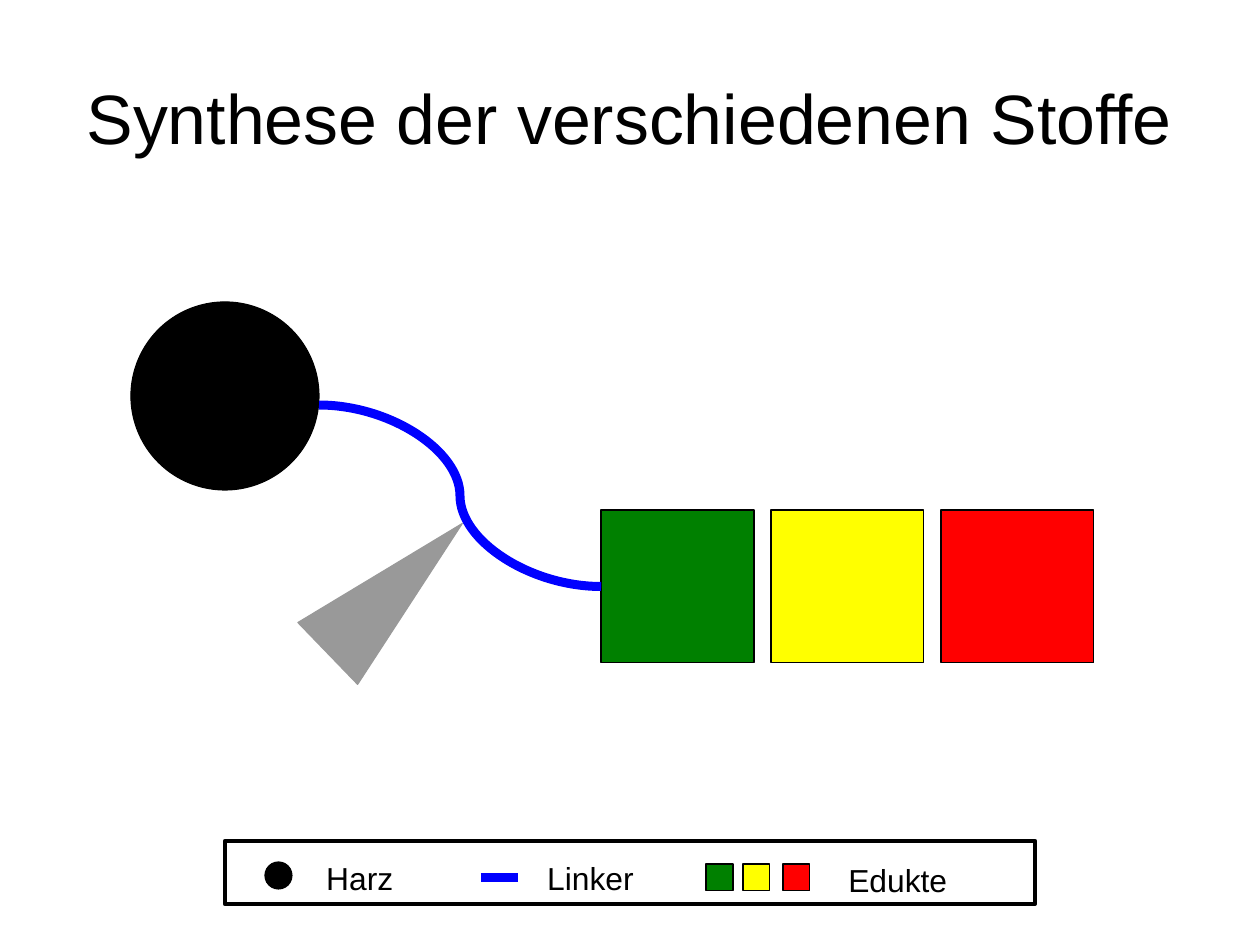
"""Build the slide on the synthesis of different substances on a resin."""
import pptx
import pptx.dml.color
import pptx.enum.shapes
import pptx.enum.text
import pptx.oxml
import pptx.util

PX = 8000
SHAPES = pptx.enum.shapes.MSO_SHAPE
CONNECTORS = pptx.enum.shapes.MSO_CONNECTOR
TEXT = pptx.enum.text
EFFECT_LIST = '<a:effectLst xmlns:a="http://schemas.openxmlformats.org/drawingml/2006/main"/>'


def color(hex_string):
    return pptx.dml.color.RGBColor.from_string(hex_string)


def add_solid(kind, left, top, width, height, fill, line="000000"):
    shape = slide.shapes.add_shape(kind, left * PX, top * PX, width * PX, height * PX)
    shape.shadow.inherit = False
    shape.fill.solid()
    shape.fill.fore_color.rgb = color(fill)
    shape.line.color.rgb = color(line)
    shape.line.width = pptx.util.Pt(0)
    return shape


presentation = pptx.Presentation()
presentation.slide_width = 1260 * PX
presentation.slide_height = 945 * PX
slide = presentation.slides.add_slide(presentation.slide_layouts[6])

add_solid(SHAPES.OVAL, 131, 302, 188, 188, "000000")
add_solid(SHAPES.OVAL, 265, 862, 27, 27, "000000")

educts = []
for index, (fill, legend_left) in enumerate([("008000", 706), ("FFFF00", 743), ("FF0000", 783)]):
    educts.append(add_solid(SHAPES.RECTANGLE, 601 + 170 * index, 510, 153, 153, fill))
    add_solid(SHAPES.RECTANGLE, legend_left, 864, 27, 27, fill)

linker = slide.shapes.add_connector(CONNECTORS.CURVE, 319 * PX, 405 * PX, 601 * PX, 587 * PX)
linker.end_connect(educts[0], 1)
legend_linker = slide.shapes.add_connector(CONNECTORS.STRAIGHT, 481 * PX, 878 * PX, 518 * PX, 878 * PX)
for connector in (linker, legend_linker):
    connector.line.color.rgb = color("0000FF")
    connector.line.width = pptx.util.Pt(5.67)
    connector._element.spPr.append(pptx.oxml.parse_xml(EFFECT_LIST))

legend_frame = add_solid(SHAPES.RECTANGLE, 225, 841, 810, 63, "FFFFFF")
legend_frame.fill.background()
legend_frame.line.width = pptx.util.Pt(2.83)

cleavage_wedge = add_solid(SHAPES.ISOSCELES_TRIANGLE, 352, 495, 86, 187, "999999", "999999")
cleavage_wedge.rotation = 46

for text, left, top, width, height, size in [
    ("Synthese der verschiedenen Stoffe", 63, 74, 1134, 85, 44),
    ("Harz", 315, 853, 90, 48, 20),
    ("Linker", 536, 853, 110, 48, 20),
    ("Edukte", 837, 855, 122, 48, 20),
]:
    is_title = size == 44
    text_box = slide.shapes.add_textbox(left * PX, top * PX, width * PX, height * PX)
    text_frame = text_box.text_frame
    text_frame.text = text
    text_frame.word_wrap = is_title
    text_frame.auto_size = TEXT.MSO_AUTO_SIZE.SHAPE_TO_FIT_TEXT
    paragraph = text_frame.paragraphs[0]
    if is_title:
        text_frame.margin_left = text_frame.margin_right = 0
        text_frame.margin_top = text_frame.margin_bottom = 0
        text_frame.vertical_anchor = TEXT.MSO_ANCHOR.MIDDLE
        paragraph.alignment = TEXT.PP_ALIGN.CENTER
    font = paragraph.runs[0].font
    font.name = "Arial"
    font.size = pptx.util.Pt(size)
    font.color.rgb = color("000000")

presentation.save("out.pptx")
